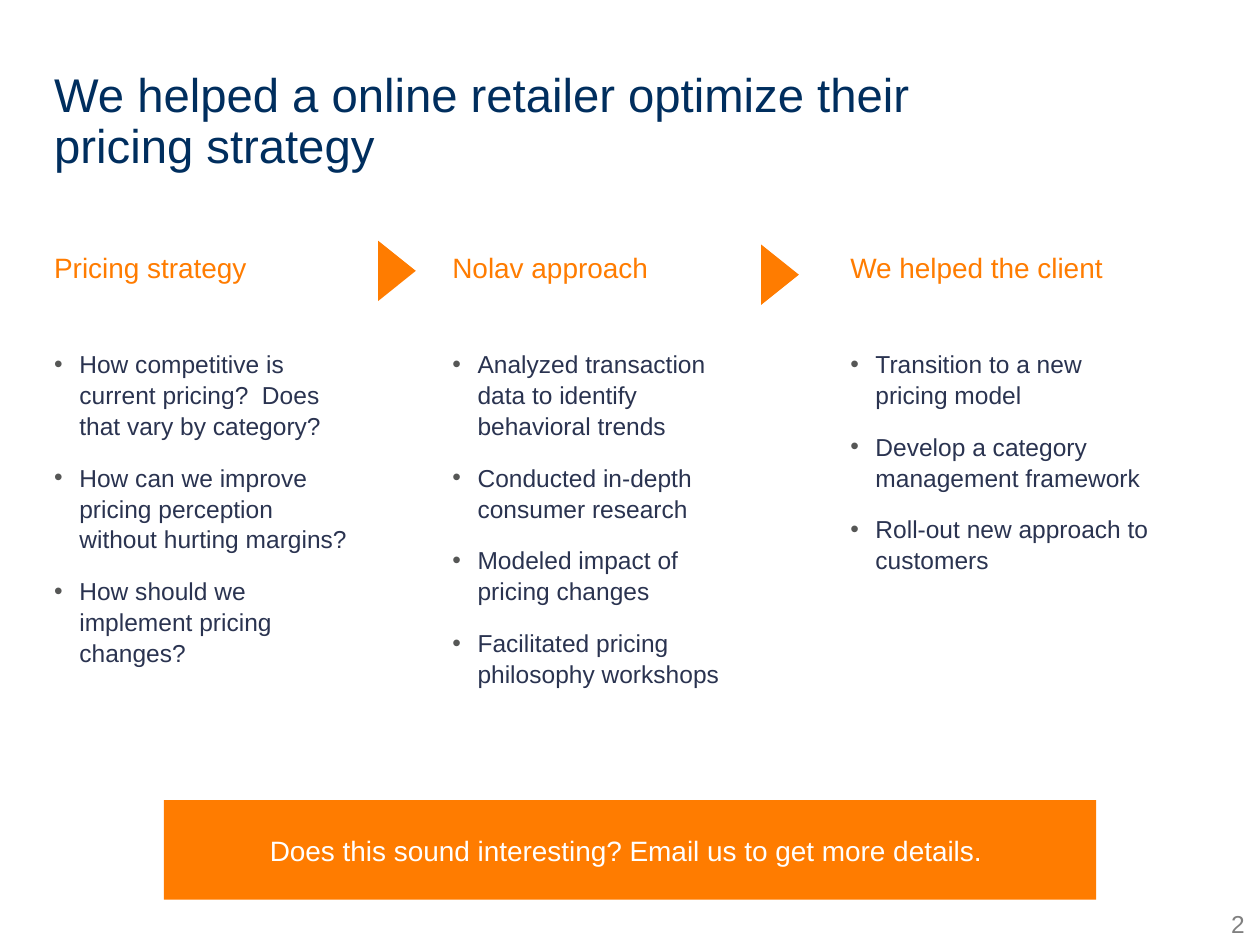
from pptx import Presentation
from pptx.dml.color import RGBColor
from pptx.enum.shapes import MSO_SHAPE as Preset
from pptx.enum.text import MSO_ANCHOR as Anchor, MSO_AUTO_SIZE as AutoSize, PP_ALIGN as Align
from pptx.oxml.ns import qn
from pptx.util import Inches, Pt
from lxml.etree import SubElement

COLORS = {"navy": "002E5E", "orange": "FF7C00", "text": "2A3350",
          "bullet": "565756", "gray": "808080", "white": "FFFFFF"}
FONT = "Arial"
LEFT, COLUMN_STEP, COLUMN_WIDTH = 0.33, 3.16, 2.6
HEADING_TOP, HEADING_HEIGHT = 1.94, 0.42
LIST_TOP, LIST_HEIGHT = 2.71, 4.03
COLUMNS = [
    ("Pricing strategy", [
        "How competitive is current pricing?  Does that vary by category?",
        "How can we improve pricing perception without hurting margins?",
        "How should we implement pricing changes?"]),
    ("Nolav approach", [
        "Analyzed transaction data to identify behavioral trends",
        "Conducted in-depth consumer research",
        "Modeled impact of pricing changes",
        "Facilitated pricing philosophy workshops"]),
    ("We helped the client", [
        "Transition to a new pricing model",
        "Develop a category management framework",
        "Roll-out new approach to customers"]),
]


def place(shape, box):
    """Move a shape to a (left, top, width, height) box in inches."""
    shape.left, shape.top, shape.width, shape.height = map(Inches, box)


def add_bullet(paragraph):
    """Give a paragraph a round bullet with a hanging indent."""
    properties = paragraph._p.get_or_add_pPr()
    properties.set("marL", str(Inches(0.2)))
    properties.set("indent", str(-Inches(0.2)))
    color = SubElement(properties, qn("a:buClr"))
    SubElement(color, qn("a:srgbClr"), val=COLORS["bullet"])
    SubElement(properties, qn("a:buFont"), typeface=FONT)
    SubElement(properties, qn("a:buChar"), char="•")


def write(shape, lines, size, color, align=Align.LEFT, anchor=Anchor.TOP,
          spacing=1.0, bulleted=False, wrap=True):
    """Fill a shape with evenly formatted paragraphs."""
    frame = shape.text_frame
    frame.auto_size = AutoSize.NONE
    frame.word_wrap = wrap
    frame.vertical_anchor = anchor
    for index, line in enumerate(lines):
        paragraph = frame.add_paragraph() if index else frame.paragraphs[0]
        paragraph.text = line
        if bulleted:
            add_bullet(paragraph)
        paragraph.alignment = align
        paragraph.line_spacing = spacing
        paragraph.space_before = Pt(12 if index else 0)
        paragraph.font.name = FONT
        paragraph.font.size = Pt(size)
        paragraph.font.bold = False
        paragraph.font.color.rgb = RGBColor.from_string(COLORS[color])


def add_solid(slide, preset, box):
    """Add a flat orange shape without outline or shadow."""
    shape = slide.shapes.add_shape(preset, *map(Inches, box))
    shape.shadow.inherit = False
    shape.fill.solid()
    shape.fill.fore_color.rgb = RGBColor.from_string(COLORS["orange"])
    shape.line.fill.background()
    return shape


def fill_title(slide, box):
    """Place and format the slide title."""
    place(slide.shapes.title, box)
    write(slide.shapes.title, ["We helped a online retailer optimize their pricing strategy"],
          27, "navy", spacing=0.9)


def fill_column(heading_shape, list_shape, left, heading, items):
    """Place a heading and its bulleted list in one column."""
    place(heading_shape, (left, HEADING_TOP, COLUMN_WIDTH, HEADING_HEIGHT))
    write(heading_shape, [heading], 16, "orange")
    place(list_shape, (left, LIST_TOP, COLUMN_WIDTH, LIST_HEIGHT))
    write(list_shape, items, 14, "text", spacing=1.05, bulleted=True)


def fill_columns(slide):
    """Fill the columns, with text boxes where the layout has no placeholder."""
    holders = [shape for shape in slide.placeholders if shape.placeholder_format.idx]
    while len(holders) < 2 * len(COLUMNS):
        holders.append(slide.shapes.add_textbox(0, 0, 0, 0))
    for index, (heading, items) in enumerate(COLUMNS):
        fill_column(*holders[2 * index:2 * index + 2], LEFT + index * COLUMN_STEP, heading, items)


def add_arrows(slide, tops):
    """Add a right-pointing triangle between neighbouring columns."""
    for index, top in enumerate(tops):
        arrow = add_solid(slide, Preset.ISOSCELES_TRIANGLE, (2.91 + index * 3.04, top, 0.48, 0.3))
        arrow.rotation = 90


def add_banner(slide, box):
    """Add the call to action."""
    banner = add_solid(slide, Preset.RECTANGLE, box)
    write(banner, ["Does this sound interesting? Email us to get more details. "],
          16, "white", Align.CENTER, Anchor.MIDDLE)


def add_page_number(slide, box):
    """Add the page number without margins."""
    number = slide.shapes.add_textbox(*map(Inches, box))
    frame = number.text_frame
    frame.margin_left = frame.margin_right = frame.margin_top = frame.margin_bottom = 0
    write(number, ["2"], 14, "gray", Align.RIGHT, spacing=0.7)


def main():
    """Build and save the slide."""
    presentation = Presentation()
    presentation.slide_width, presentation.slide_height = Inches(10), Inches(7.5)
    slide = presentation.slides.add_slide(presentation.slide_layouts.get_by_name("Comparison"))
    fill_title(slide, (LEFT, 0.52, 7.13, 0.56))
    fill_columns(slide)
    add_arrows(slide, (2, 2.03))
    add_banner(slide, (1.3, 6.35, 7.4, 0.79))
    add_page_number(slide, (9.64, 7.28, 0.24, 0.16))
    presentation.save("out.pptx")


if __name__ == "__main__":
    main()
